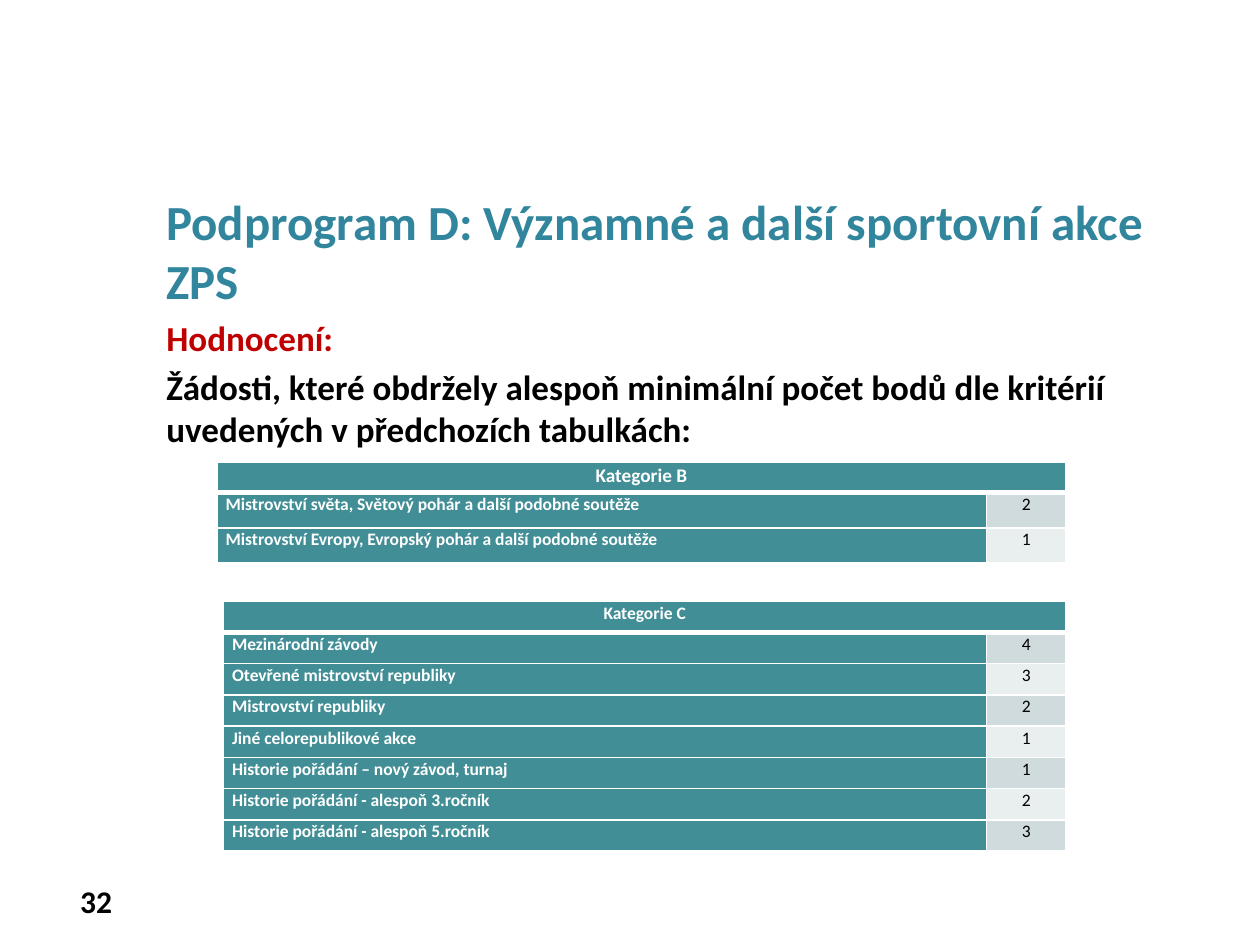
from lxml import etree
from pptx import Presentation
from pptx.dml.color import RGBColor
from pptx.enum.text import MSO_ANCHOR, MSO_AUTO_SIZE, PP_ALIGN
from pptx.oxml.ns import qn
from pptx.util import Cm, Pt

LEFT, MID, RIGHT = PP_ALIGN.LEFT, PP_ALIGN.CENTER, PP_ALIGN.RIGHT
CENTRE = MSO_ANCHOR.MIDDLE
FIXED = MSO_AUTO_SIZE.NONE

WHITE, BLACK, TEAL = "FFFFFF", "000000", "418E96"
BLUE, RED = "31859C", "C00000"
BANDS = ("CFDBDD", "E9EEEF")


def color(code):
    return RGBColor.from_string(code)


class Deck:
    font = "Calibri"

    def __init__(self):
        self.prs = Presentation()
        self.prs.slide_width, self.prs.slide_height = Cm(25.4), Cm(19.05)
        self.slide = self.prs.slides.add_slide(self.prs.slide_layouts[1])
        title = self.slide.shapes.title
        title.element.getparent().remove(title.element)

    def style(self, para, size, code, bold=True, align=LEFT):
        para.alignment = align
        for run in para.runs:
            font = run.font
            font.name, font.size, font.bold = self.font, Pt(size), bold
            font.color.rgb = color(code)

    def body(self, box, lines):
        shape = self.slide.placeholders[1]
        shape.left, shape.top, shape.width, shape.height = map(Cm, box)
        frame = shape.text_frame
        frame.auto_size = FIXED
        frame.text = "\n".join(text for text, _, _ in lines)
        for row, (para, (_, size, code)) in enumerate(zip(frame.paragraphs, lines)):
            props = para._p.get_or_add_pPr()
            props.set("marL", "0")
            props.set("indent", "0")
            etree.SubElement(props, qn("a:buNone"))
            para.space_before = Pt(size * 0.2 if row else 0)
            self.style(para, size, code)

    def label(self, box, text, size):
        frame = self.slide.shapes.add_textbox(*map(Cm, box)).text_frame
        frame.word_wrap = True
        frame.vertical_anchor = CENTRE
        frame.text = text
        self.style(frame.paragraphs[0], size, BLACK, align=RIGHT)

    def edges(self, cell, top, bottom):
        props = cell._tc.get_or_add_tcPr()
        for side, width in (("L", 1), ("R", 1), ("T", top), ("B", bottom)):
            line = etree.SubElement(props, qn("a:ln" + side), w=str(Pt(width)))
            fill = etree.SubElement(line, qn("a:solidFill"))
            etree.SubElement(fill, qn("a:srgbClr"), val=WHITE)

    def cell(self, cell, text, fill, size, code, bold, align):
        cell.margin_left = cell.margin_right = Cm(0.18)
        cell.margin_top = cell.margin_bottom = 0
        cell.fill.solid()
        cell.fill.fore_color.rgb = color(fill)
        cell.text = text
        para = cell.text_frame.paragraphs[0]
        para.line_spacing = 1.07
        self.style(para, size, code, bold, align)

    def table(self, left, top, cols, high, step, head, size, rows):
        count = len(rows) + 1
        grid = self.slide.shapes.add_table(
            count, 2, Cm(left), Cm(top), Cm(sum(cols)), Cm(high + step * len(rows))
        ).table
        grid.first_row = grid.horz_banding = False
        for col, width in zip(grid.columns, cols):
            col.width = Cm(width)
        for num, row in enumerate(grid.rows):
            row.height = Cm(step if num else high)
            for cell in row.cells:
                self.edges(cell, 3 if num == 1 else 1, 1 if num else 3)
        grid.cell(0, 0).merge(grid.cell(0, 1))
        self.cell(grid.cell(0, 0), head, TEAL, size, WHITE, True, MID)
        for num, (name, score) in enumerate(rows):
            self.cell(grid.cell(num + 1, 0), name, TEAL, 10, WHITE, True, LEFT)
            self.cell(grid.cell(num + 1, 1), score, BANDS[num % 2], 10, BLACK, False, MID)


def main():
    deck = Deck()
    deck.label((0.71, 17.65, 1.8, 1.02), "32", 18)
    deck.body((3.1, 3.73, 21.03, 14.6), [
        ("Podprogram D: Významné a další sportovní akce ZPS", 28, BLUE),
        ("Hodnocení:", 20, RED),
        ("Žádosti, které obdržely alespoň minimální počet bodů dle kritérií "
         "uvedených v předchozích tabulkách:", 20, BLACK),
    ])
    deck.table(4.37, 9.32, (15.52, 1.6), 0.61, 0.71, "Kategorie B", 11, [
        ("Mistrovství světa, Světový pohár a další podobné soutěže", "2"),
        ("Mistrovství Evropy, Evropský pohár a další podobné soutěže", "1"),
    ])
    deck.table(4.5, 12.12, (15.39, 1.6), 0.63, 0.63, "Kategorie C", 10, [
        ("Mezinárodní závody", "4"),
        ("Otevřené mistrovství republiky", "3"),
        ("Mistrovství republiky", "2"),
        ("Jiné celorepublikové akce", "1"),
        ("Historie pořádání – nový závod, turnaj", "1"),
        ("Historie pořádání - alespoň 3.ročník", "2"),
        ("Historie pořádání - alespoň 5.ročník", "3"),
    ])
    deck.prs.save("out.pptx")


if __name__ == "__main__":
    main()
